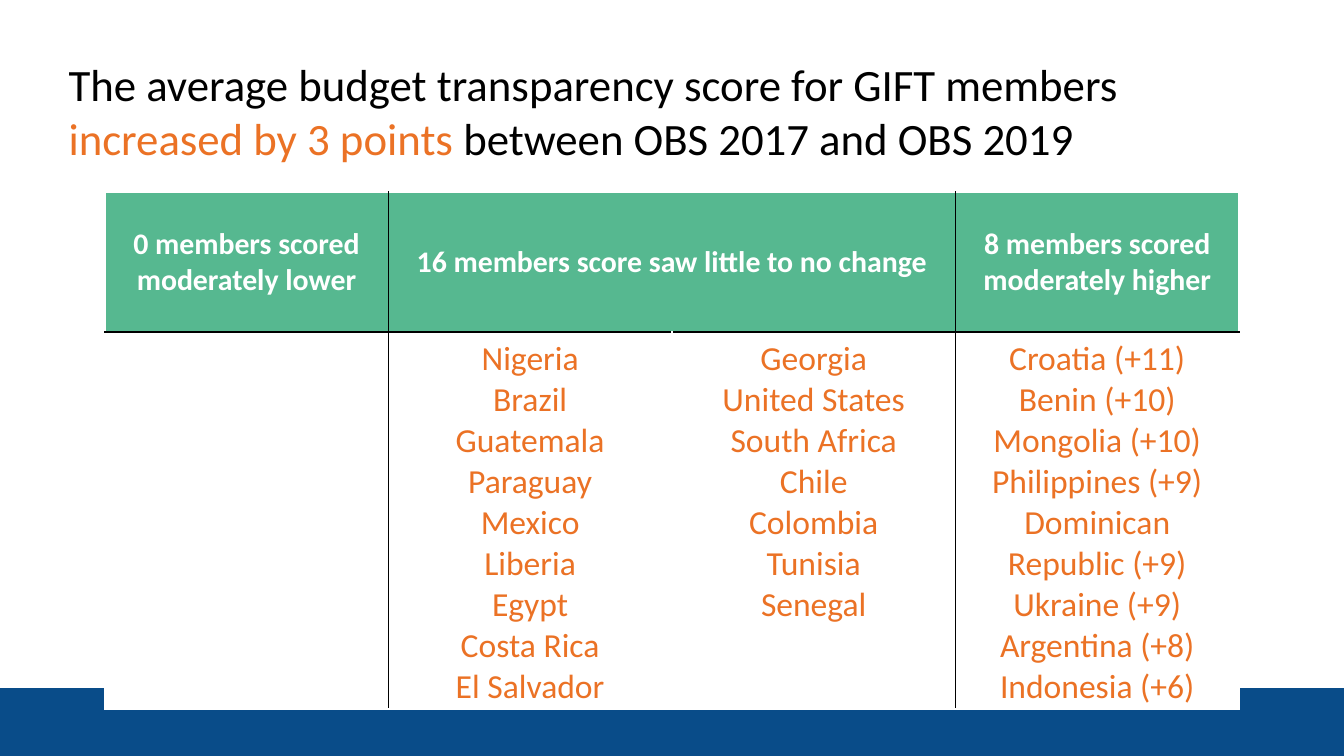
from lxml.etree import SubElement
from pptx import Presentation
from pptx.dml.color import RGBColor
from pptx.enum.shapes import MSO_SHAPE
from pptx.enum.text import MSO_ANCHOR, PP_ALIGN
from pptx.oxml.ns import qn
from pptx.util import Inches, Pt

COLORS = {
    "black": "000000",
    "white": "FFFFFF",
    "orange": "EB7225",
    "green": "56B890",
    "blue": "094C89",
}
FONT = "Calibri"
TITLE = [
    ("The average budget transparency score for GIFT members ", "black"),
    ("increased by 3 points ", "orange"),
    ("between OBS 2017 and OBS 2019", "black"),
]
HEADERS = {
    0: "0 members scored moderately lower",
    1: "16 members score saw little to no change",
    3: "8 members scored moderately higher",
}
MEMBERS = [
    [],
    ["Nigeria", "Brazil", "Guatemala", "Paraguay", "Mexico", "Liberia",
     "Egypt", "Costa Rica", "El Salvador"],
    ["Georgia", "United States", "South Africa", "Chile", "Colombia",
     "Tunisia", "Senegal"],
    ["Croatia (+11)", "Benin (+10)", "Mongolia (+10)", "Philippines (+9)",
     "Dominican Republic (+9)", "Ukraine (+9)", "Argentina (+8)",
     "Indonesia (+6)"],
]
RULED_EDGES = {1, 3}  # column edges that carry a black rule


def color(name):
    return RGBColor.from_string(COLORS[name])


def format_font(font, size, color_name, bold=False):
    font.name = FONT
    font.size = Pt(size)
    font.bold = bold
    font.color.rgb = color(color_name)


def add_footer_band(slide, left, top, width, height):
    band = slide.shapes.add_shape(MSO_SHAPE.RECTANGLE, left, top, width, height)
    band.shadow.inherit = False
    band.fill.solid()
    band.fill.fore_color.rgb = color("blue")
    band.line.fill.background()


def place_title(slide, left, top, width, height):
    title = slide.shapes.title
    title.left, title.top, title.width, title.height = left, top, width, height
    text_frame = title.text_frame
    text_frame.word_wrap = True
    text_frame.vertical_anchor = MSO_ANCHOR.TOP
    paragraph = text_frame.paragraphs[0]
    paragraph.alignment = PP_ALIGN.LEFT
    for text, color_name in TITLE:
        run = paragraph.add_run()
        run.text = text
        format_font(run.font, 24, color_name)


def set_borders(cell, **sides):
    """Draw one-point borders; sides must come in the order L, R, T, B."""
    properties = cell._tc.get_or_add_tcPr()
    for side, color_name in sides.items():
        line = SubElement(properties, qn(f"a:ln{side}"), w=str(Pt(1)))
        fill = SubElement(line, qn("a:solidFill"))
        SubElement(fill, qn("a:srgbClr"), val=COLORS[color_name])


def fill_cell(cell, lines, size, color_name, bold=False):
    cell.text_frame.text = "\n".join(lines)
    for paragraph in cell.text_frame.paragraphs:
        paragraph.alignment = PP_ALIGN.CENTER
        for run in paragraph.runs:
            format_font(run.font, size, color_name, bold)


def add_member_table(slide, left, top, width, height):
    columns = len(MEMBERS)
    table = slide.shapes.add_table(2, columns, left, top, width, height).table
    table.horz_banding = False
    for column in table.columns:
        column.width = width // columns
    table.rows[0].height = Inches(1.04)
    table.rows[1].height = height - table.rows[0].height
    table.cell(0, 1).merge(table.cell(0, 2))

    for row, background in enumerate(["green", "white"]):
        for column in range(columns):
            cell = table.cell(row, column)
            edges = ["black" if edge in RULED_EDGES else "white"
                     for edge in (column, column + 1)]
            set_borders(cell, L=edges[0], R=edges[1],
                        T="black" if row else "white",
                        B="white" if row else "black")
            cell.fill.solid()
            cell.fill.fore_color.rgb = color(background)

    for column, header in HEADERS.items():
        cell = table.cell(0, column)
        cell.vertical_anchor = MSO_ANCHOR.MIDDLE
        fill_cell(cell, [header], 16, "white", bold=True)
    for column, members in enumerate(MEMBERS):
        cell = table.cell(1, column)
        cell.margin_bottom = Inches(0.01)
        fill_cell(cell, members, 18, "orange")


def main():
    presentation = Presentation()
    presentation.slide_width = Inches(10)
    presentation.slide_height = presentation.slide_width * 9 // 16
    slide = presentation.slides.add_slide(presentation.slide_layouts[5])
    band_top = Inches(5.12)
    add_footer_band(slide, 0, band_top, presentation.slide_width,
                    presentation.slide_height - band_top)
    place_title(slide, Inches(0.41), Inches(0.37), Inches(9.19), Inches(0.91))
    add_member_table(slide, Inches(0.78), Inches(1.43), Inches(8.44), Inches(3.43))
    presentation.save("out.pptx")


if __name__ == "__main__":
    main()
